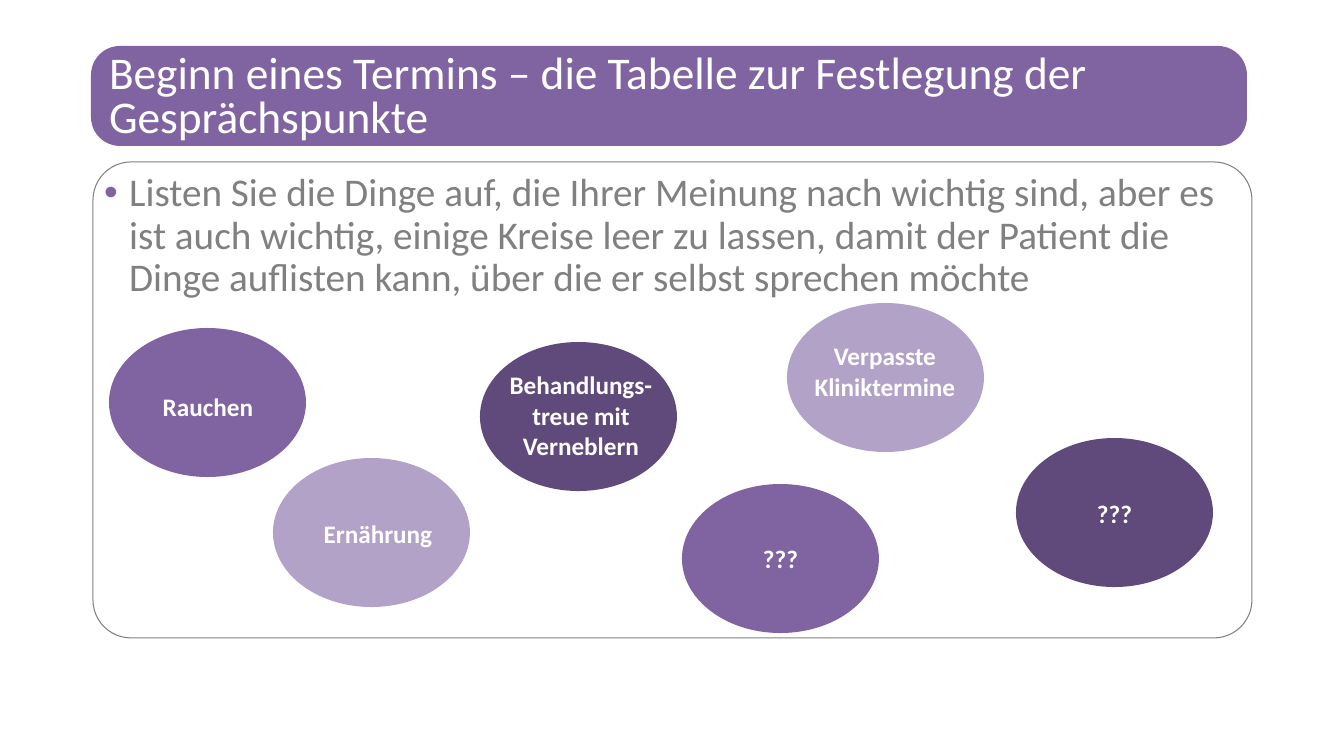
"""Build the slide on setting the agenda at the start of an appointment."""
import pptx
import pptx.util
import pptx.dml.color
import pptx.enum.shapes
import pptx.enum.text
import pptx.oxml
import pptx.oxml.ns

RGB = pptx.dml.color.RGBColor
SHAPE = pptx.enum.shapes.MSO_SHAPE
ANCHOR = pptx.enum.text.MSO_ANCHOR
ALIGN = pptx.enum.text.PP_ALIGN
WHITE = RGB(0xFF, 0xFF, 0xFF)
GREY = RGB(0x80, 0x80, 0x80)
PURPLE = RGB(0x80, 0x64, 0xA2)
LIGHT = RGB(0xB3, 0xA2, 0xC7)
DARK = RGB(0x60, 0x4A, 0x7B)
SCALE = 12192000 / 1344


def draw(shapes, kind, box, fill=None):
    shape = shapes.add_shape(kind, *[round(n * SCALE) for n in box])
    shape.shadow.inherit = False
    shape.line.fill.background()
    if fill is None:
        shape.fill.background()
    else:
        shape.fill.solid()
        shape.fill.fore_color.rgb = fill
    return shape


def write(para, text, size, color, bold=False):
    run = para.add_run()
    run.text = text
    run.font.name = "Calibri"
    run.font.size = pptx.util.Pt(size)
    run.font.bold = bold
    run.font.color.rgb = color


deck = pptx.Presentation()
deck.slide_width = round(1344 * SCALE)
deck.slide_height = round(756 * SCALE)
slide = deck.slides.add_slide(deck.slide_layouts[6])

bar = draw(slide.shapes, SHAPE.ROUNDED_RECTANGLE, (91, 46, 1156, 100), PURPLE)
bar.adjustments[0] = 0.29
title = slide.shapes.add_textbox(*[round(n * SCALE) for n in (109, 62, 1127, 73)])
panel = draw(slide.shapes, SHAPE.ROUNDED_RECTANGLE, (93, 162, 1159, 476))
panel.adjustments[0] = 0.08
panel.line.color.rgb = GREY
panel.line.width = pptx.util.Pt(0.75)

for shape, anchor in ((title, ANCHOR.MIDDLE), (panel, ANCHOR.TOP)):
    frame = shape.text_frame
    frame.word_wrap = True
    frame.vertical_anchor = anchor
    frame.margin_left = frame.margin_right = 0
    frame.margin_top = frame.margin_bottom = 0

para = title.text_frame.paragraphs[0]
para.line_spacing = 0.8
write(para, "Beginn eines Termins – die Tabelle zur Festlegung der Gesprächspunkte", 32.4, WHITE)

para = panel.text_frame.paragraphs[0]
para.alignment = ALIGN.LEFT
para.line_spacing = 0.9
props = para._p.get_or_add_pPr()
indent = round(25 * SCALE)
props.set("marL", str(indent))
props.set("indent", str(-indent))
space = pptx.oxml.ns.nsdecls("a")
for mark in (
    f'<a:buClr {space}><a:srgbClr val="{PURPLE}"/></a:buClr>',
    f'<a:buFont {space} typeface="Arial"/>',
    f'<a:buChar {space} char="•"/>',
):
    props.append(pptx.oxml.parse_xml(mark))
write(para, "Listen Sie die Dinge auf, die Ihrer Meinung nach wichtig sind, aber es ist auch "
      "wichtig, einige Kreise leer zu lassen, damit der Patient die Dinge auflisten kann, "
      "über die er selbst sprechen möchte", 28, GREY)

topics = [
    (273, 458, LIGHT, (313, 513, 130, 40), [["Ernährung"]]),
    (109, 328, PURPLE, (152, 386, 112, 40), [["Rauchen"]]),
    (480, 342, DARK, (499, 364, 164, 102), [["Behandlungs-", "treue mit"], ["Verneblern"]]),
    (787, 303, LIGHT, (753, 335, 264, 72), [["Verpasste", "Kliniktermine"]]),
    (682, 484, PURPLE, (753, 538, 55, 40), [["???"]]),
    (1016, 438, DARK, (1087, 493, 55, 40), [["???"]]),
]
for left, top, color, box, paras in topics:
    group = slide.shapes.add_group_shape()
    draw(group.shapes, SHAPE.OVAL, (left, top, 197, 149), color)
    label = group.shapes.add_textbox(*[round(n * SCALE) for n in box])
    frame = label.text_frame
    frame.word_wrap = False
    frame.vertical_anchor = ANCHOR.MIDDLE
    for row, lines in enumerate(paras):
        para = frame.add_paragraph() if row else frame.paragraphs[0]
        para.alignment = ALIGN.CENTER
        for spot, line in enumerate(lines):
            if spot:
                para.add_line_break()
            write(para, line, 18, WHITE, True)

deck.save("out.pptx")
